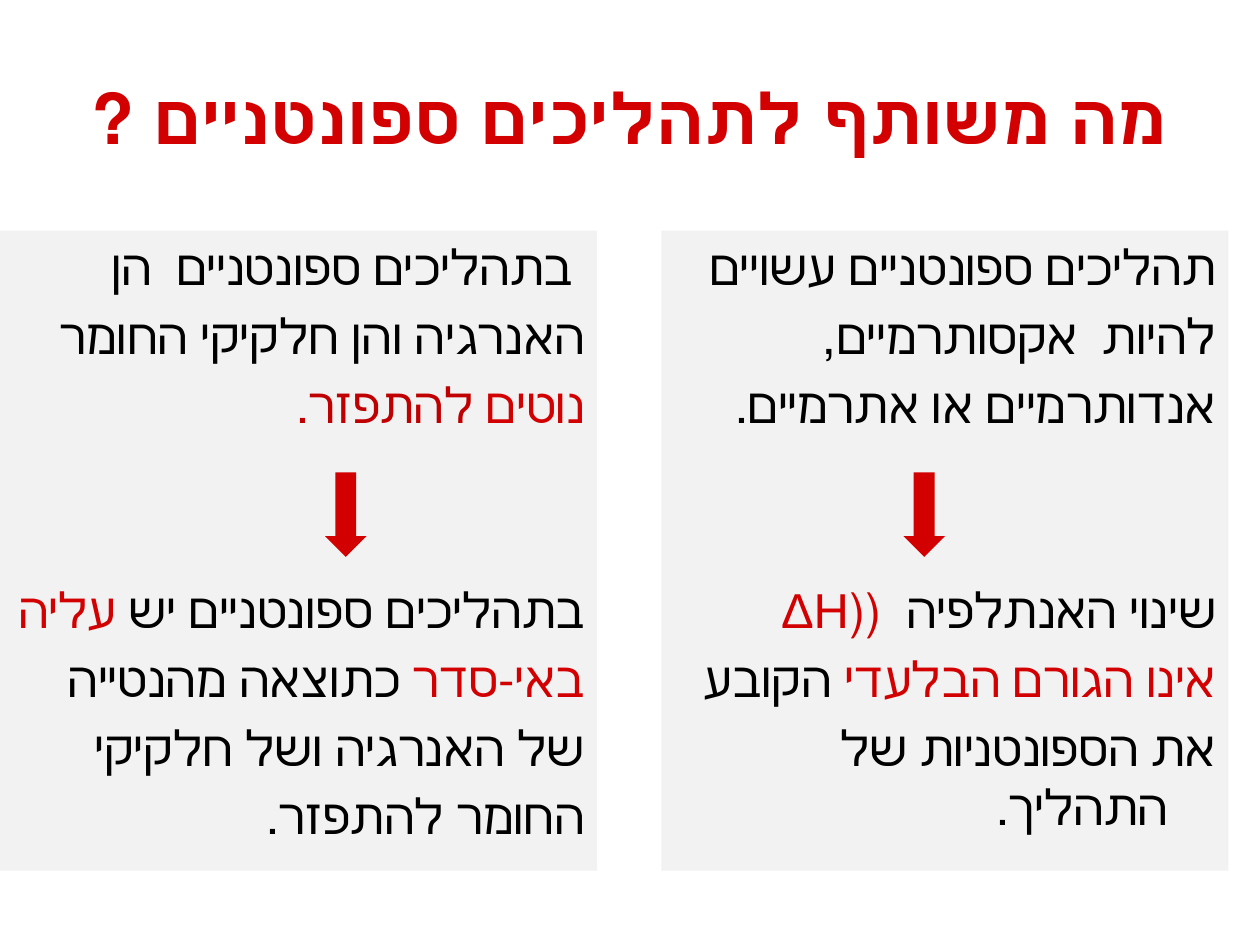
from pptx import Presentation
from pptx.dml.color import RGBColor
from pptx.enum.shapes import MSO_SHAPE
from pptx.enum.text import MSO_ANCHOR, PP_ALIGN
from pptx.util import Inches, Pt

RECT, ARROW = MSO_SHAPE.RECTANGLE, MSO_SHAPE.DOWN_ARROW
TOP, MIDDLE = MSO_ANCHOR.TOP, MSO_ANCHOR.MIDDLE
CENTER, RIGHT = PP_ALIGN.CENTER, PP_ALIGN.RIGHT

FONT = "Arial"
RED, DARK, BLACK, GRAY = "D20000", "C00000", "000000", "F2F2F2"
HANG = Inches(0.38)
GAP, STEP = 84, 5.6  # points before a line: after the arrow, elsewhere

# Each panel: left, width, arrow left, lines above and below the arrow
PANELS = [
    (0, 4.74, 2.58,
     [[(" בתהליכים ספונטניים  הן", BLACK)],
      [("האנרגיה והן חלקיקי החומר", BLACK)],
      [("נוטים ", RED), ("להתפזר. ", DARK)]],
     [[("בתהליכים ספונטניים יש ", BLACK), ("עליה", RED)],
      [("באי-סדר ", RED), ("כתוצאה מהנטייה", BLACK)],
      [("של האנרגיה ושל חלקיקי ", BLACK)],
      [("החומר להתפזר.", BLACK)]]),
    (5.25, 4.5, 7.17,
     [[("תהליכים ספונטניים עשויים", BLACK)],
      [("להיות  אקסותרמיים,", BLACK)],
      [("אנדותרמיים או אתרמיים.", BLACK)]],
     [[("שינוי האנתלפיה  ", BLACK), ("((ΔH ", RED)],
      [("אינו הגורם הבלעדי ", RED), ("הקובע ", BLACK)],
      [("את הספונטניות של התהליך.", BLACK)]]),
]


def color(code):
    return RGBColor.from_string(code)


class Deck:
    def __init__(self, width, height):
        self.prs = Presentation()
        self.prs.slide_width, self.prs.slide_height = Inches(width), Inches(height)
        self.slide = self.prs.slides.add_slide(self.prs.slide_layouts[6])

    def shape(self, kind, box, fill):
        shape = self.slide.shapes.add_shape(kind, *map(Inches, box))
        shape.shadow.inherit = False
        shape.fill.solid()
        shape.fill.fore_color.rgb = color(fill)
        shape.line.fill.background()
        return shape

    def line(self, para, runs, align, size, bold=False, before=0, hang=0):
        """Fill one right-to-left paragraph with coloured runs."""
        para.alignment, para.space_before = align, Pt(before)
        props = para._p.get_or_add_pPr()
        for key, value in {"marL": hang, "indent": -hang, "rtl": 1}.items():
            props.set(key, str(value))
        for text, code in runs:
            run = para.add_run()
            run.text = text
            for key, value in {"name": FONT, "size": Pt(size), "bold": bold}.items():
                setattr(run.font, key, value)
            run.font.color.rgb = color(code)

    def title(self, box, text):
        frame = self.slide.shapes.add_textbox(*map(Inches, box)).text_frame
        frame.word_wrap, frame.vertical_anchor = True, MIDDLE
        self.line(frame.paragraphs[0], [(text, RED)], CENTER, 40, bold=True)

    def panel(self, box, upper, lower):
        frame = self.shape(RECT, box, GRAY).text_frame
        frame.word_wrap, frame.vertical_anchor = True, TOP
        for i, runs in enumerate(upper + lower):
            para = frame.add_paragraph() if i else frame.paragraphs[0]
            before = GAP if i == len(upper) else STEP
            self.line(para, runs, RIGHT, 28, before=before, hang=HANG)


def main():
    deck = Deck(10, 7.5)
    deck.title((0.33, 0.3, 9.33, 1.25), "מה משותף לתהליכים ספונטניים ?")
    for left, width, arrow, upper, lower in PANELS:
        deck.panel((left, 1.83, width, 5.08), upper, lower)
        deck.shape(ARROW, (arrow, 3.75, 0.33, 0.67), RED)
    deck.prs.save("out.pptx")


if __name__ == "__main__":
    main()
